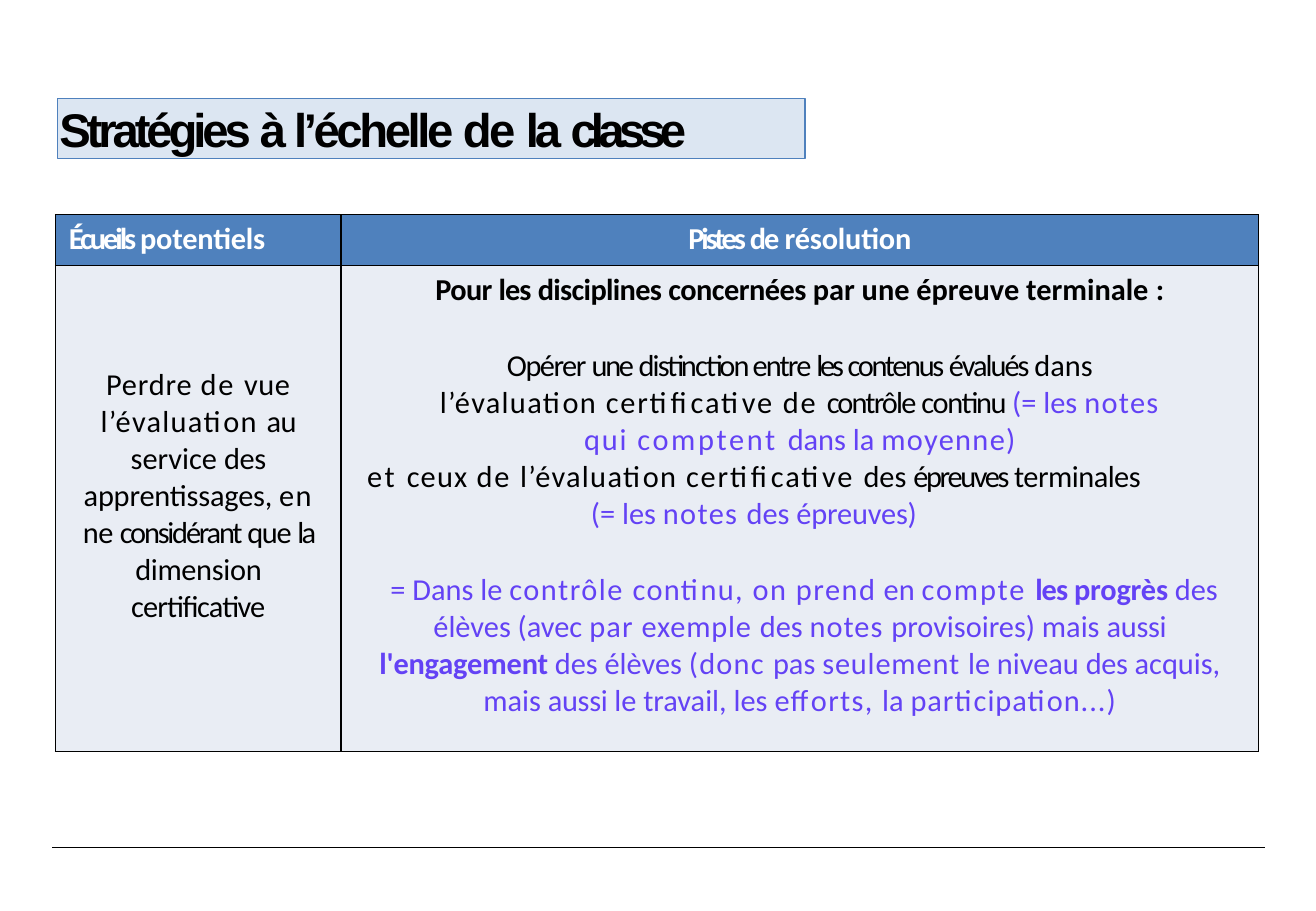
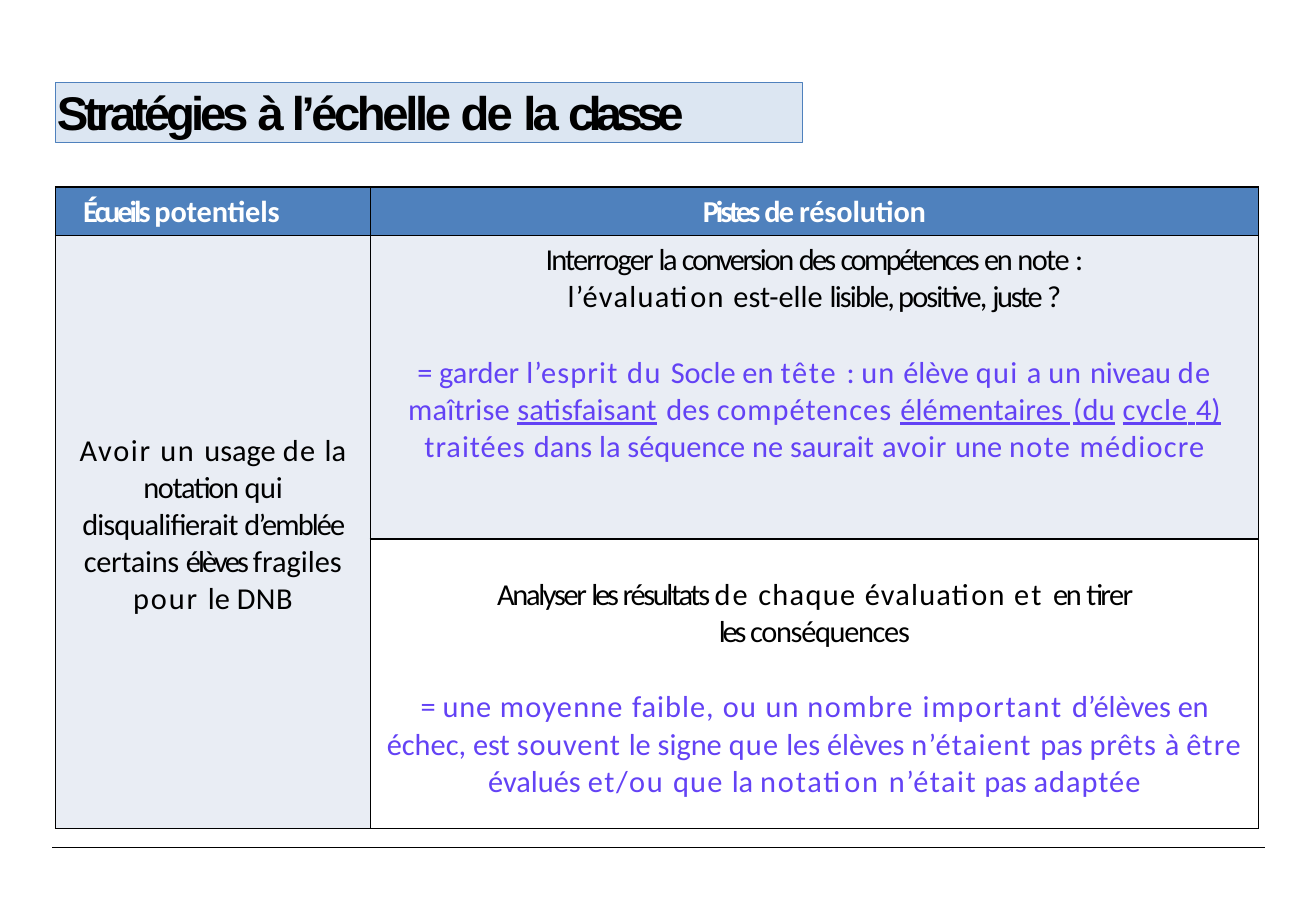
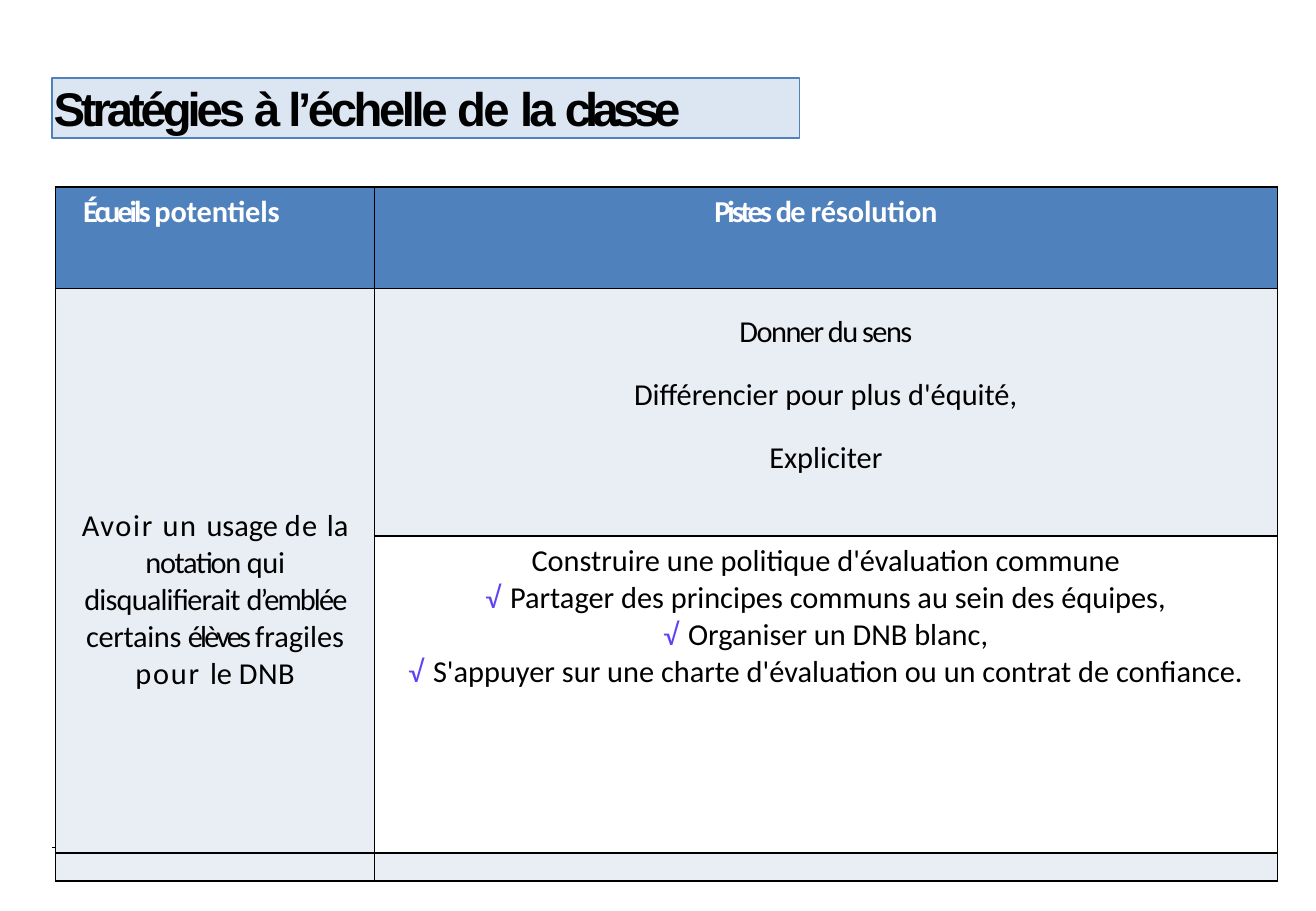
"""Build three slides on classroom strategies for assessment."""
from dataclasses import dataclass

from lxml.etree import SubElement
from pptx import Presentation
from pptx.dml.color import RGBColor as Rgb
from pptx.enum.shapes import MSO_CONNECTOR as Connector, MSO_SHAPE as Shape
from pptx.enum.text import MSO_ANCHOR as Anchor, PP_ALIGN as Align
from pptx.oxml.ns import qn
from pptx.util import Cm, Pt


@dataclass(frozen=True)
class Theme:
    black: str = "000000"
    white: str = "FFFFFF"
    accent: str = "6342F5"
    header: str = "4F81BD"
    pale: str = "E9EDF4"
    title_fill: str = "DCE6F2"
    title_font: str = "Arial"
    body_font: str = "Calibri"
    title_size: float = 28
    body_size: float = 18
    empty_size: float = 8
    rule_width: float = 0.8
    title_line: float = 0.75
    border_width: float = 1


@dataclass
class Block:
    runs: list
    before: float = 0
    left: float = 0
    right: float = 0
    indent: float = 0
    style: str = "plain"
    align: Align = Align.CENTER


@dataclass
class Cell:
    blocks: list
    top: float = 0.13
    fill: str = Theme.pale


theme = Theme()
styles = {
    "plain": {},
    "bold": {"bold": True},
    "header": {"bold": True, "color": theme.white},
    "accent": {"color": theme.accent},
    "accent bold": {"color": theme.accent, "bold": True},
    "accent underline": {"color": theme.accent, "underline": True},
    "title": {"bold": True, "size": theme.title_size, "font": theme.title_font},
}


def write(para, text, size=theme.body_size, font=theme.body_font,
          color=theme.black, bold=False, underline=False, spacing=0):
    """Add one formatted span to a paragraph."""
    span = para.add_run()
    span.text = text
    span.font.size = Pt(size)
    span.font.name = font
    span.font.bold = bold
    span.font.underline = underline
    span.font.color.rgb = Rgb.from_string(color)
    span.font._element.set("spc", str(round(spacing * 100)))


def fill_frame(frame, blocks):
    """Write blocks of spaced runs as the paragraphs of a text frame."""
    for index, block in enumerate(blocks):
        para = frame.add_paragraph() if index else frame.paragraphs[0]
        para.alignment = block.align
        if block.before:
            para.space_before = Pt(block.before)
        props = para._p.get_or_add_pPr()
        for name, length in (("marL", block.left), ("marR", block.right),
                             ("indent", block.indent)):
            props.set(name, str(Cm(length)))
        for text, spacing, *style in block.runs:
            write(para, text, spacing=spacing,
                  **styles[style[0] if style else block.style])


title = Block([
    ("Stratégies ", -2.4), ("à ", -3), ("l’échelle ", -2), ("de ", -1.6),
    ("la ", -2.3), ("classe", -3.4),
], left=0.03, style="title", align=Align.LEFT)

pitfalls_runs = [("Écueils ", -1.8), ("potentiels", -0.1)]
solutions = Cell([Block([
    ("Pistes ", -1.8), ("de ", -1.1), ("résolution", -0.1),
], style="header")], fill=theme.header)

lost_sight = Block([
    ("Perdre ", 0.5), ("de ", 1.1), ("vue ", 0.3), ("l’évaluation ", 0.8),
    ("au ", -0.3), ("service ", 0), ("des ", -0.2), ("apprentissages, ", -0.1),
    ("en ", 0.8), ("ne ", -0.3), ("considérant ", -1.3), ("que ", -0.8),
    ("la ", -1.5), ("dimension ", -0.2), ("certificative", -0.5),
], left=0.48, right=0.48)

final_exam = [
    Block([
        ("Pour ", -0.4), ("les", -0.6), (" disciplines ", -0.4),
        ("concernées ", -0.3), ("par une épreuve terminale ", 0), (":", -0.5),
    ], style="bold"),
    Block([
        ("Opérer ", -0.9), ("une ", -1.4), ("distinction entre ", -1.1),
        ("les ", -1.9), ("contenus ", -1.4), ("évalués ", -1.2), ("dans ", 0),
        ("l’évaluation ", 0.8), ("certificative de ", 1.1),
        ("contrôle ", -1.1), ("continu ", -0.8), ("(= les ", 0, "accent"),
        ("notes ", 0.8, "accent"), ("qui ", 1.1, "accent"),
        ("comptent ", 1.6, "accent"), ("dans la ", 0, "accent"),
        ("moyenne)", 0.8, "accent"),
    ], before=23, left=1.93, right=1.93),
    Block([
        ("et ", 1.5), ("ceux ", 0.7), ("de ", 1.1), ("l’évaluation ", 0.8),
        ("certificative ", 1.1), ("des ", 0), ("épreuves ", -1.4),
        ("terminales", -0.3),
    ], right=1.92),
    Block([
        ("(= les ", 0), ("notes ", 0.8), ("des ", 0), ("épreuves)", -0.1),
    ], right=1.92, style="accent"),
    Block([
        ("= Dans le ", 0), ("contrôle ", 0.9), ("continu, ", 0.8),
        ("on prend", 0.9), (" en ", 0), ("compte ", 1.1),
        ("les ", -0.6, "accent bold"), ("progrès ", -0.1, "accent bold"),
        ("des élèves (avec ", 0), ("par", 0.7), (" exemple ", 0.5),
        ("des ", 0), ("notes ", 0.6), ("provisoires) mais ", 0),
        ("aussi ", -0.2), ("l'engagement ", -0.1, "accent bold"),
        ("des élèves ", 0), ("(donc ", 0.7), ("pas ", 0),
        ("seulement ", 0.5), ("le niveau ", 0), ("des ", -0.2),
        ("acquis, mais ", 0), ("aussi ", -0.2), ("le travail, les ", 0),
        ("efforts, ", 0.8), ("la ", 0), ("participation...)", 0.6),
    ], before=22.9, left=0.36, right=0.36, indent=0.18, style="accent"),
]

grading_use = Block([
    ("Avoir un ", 1), ("usage ", 0), ("de ", 0.8), ("la ", 0),
    ("notation ", -0.8), ("qui ", -0.2), ("disqualifierait ", -0.5),
    ("d’emblée ", -1.1), ("certains ", -0.2), ("élèves ", -1.7),
    ("fragiles ", 0), ("pour ", 1.1), ("le ", 0), ("DNB", 0.3),
], left=0.33, right=0.33)

conversion = [
    Block([
        ("Interroger ", -1.1), ("la ", -1.5), ("conversion ", -1.4),
        ("des ", -1.6), ("compétences ", -1.5), ("en ", -1.4),
        ("note ", -0.9), (":", -0.5),
    ]),
    Block([
        ("l’évaluation ", 0.8), ("est-elle ", 0),
        ("lisible, positive, ", -1.1), ("juste ", -1.4), ("?", -0.5),
    ]),
    Block([
        ("= garder ", 0), ("l’esprit ", 0.7), ("du ", 1), ("Socle en ", 0),
        ("tête ", 1.1), (": ", 0), ("un ", 0.6), ("élève ", 0),
        ("qui ", 0.8), ("a ", 0), ("un ", 0.6), ("niveau ", -0.1),
        ("de ", 0.8), ("maîtrise ", 0.1),
        ("satisfaisant", 0.1, "accent underline"), (" ", 1.5),
        ("des ", 0.1), ("compétences ", 0.6),
        ("élémentaires", 0.1, "accent underline"),
        (" ", 1.7, "accent underline"), ("(du", 0.2, "accent underline"),
        (" ", 0.2), ("cycle", 0.5, "accent underline"),
        (" ", 0.7, "accent underline"), ("4)", 0, "accent underline"),
        (" ", 0.7), ("traitées ", 0.6), ("dans la séquence ne saurait", 0),
        (" avoir ", 0.5), ("une ", 0), ("note ", 0.8), ("médiocre", 0.7),
    ], before=22.9, left=0.48, right=0.48, style="accent"),
]

results = [
    Block([
        ("Analyser ", -1.4), ("les ", -1.9), ("résultats ", -1.4),
        ("de ", 1.1), ("chaque ", 0.8), ("évaluation ", 0.7), ("et ", 1.4),
        ("en ", -1.4), ("tirer ", -0.9), ("les ", -1.9),
        ("conséquences", -0.8),
    ], left=2.64, right=2.64),
    Block([
        ("= ", 0), ("une ", 0.5), ("moyenne ", 0.7), ("faible, ", 0.6),
        ("ou ", 0.8), ("un ", 0.6), ("nombre ", 0.9), ("important ", 1.1),
        ("d’élèves ", 0), ("en ", -0.2), ("échec, est ", 0),
        ("souvent ", 0.5), ("le signe ", 0), ("que", 0.7),
        (" les élèves ", 0), ("n’étaient ", 0.8), ("pas ", 0),
        ("prêts ", 0.5), ("à ", 0), ("être", 0.8), (" évalués ", 0),
        ("et/ou ", 1), ("que ", 0.7), ("la ", 0), ("notation ", 1.1),
        ("n’était", 0.9), (" pas ", 0), ("adaptée", 0.6),
    ], before=22.9, left=0.3, right=0.3, style="accent"),
]

meaning = [
    Block([("Donner du sens", -0.9)]),
    Block([("Différencier pour plus d'équité,", 0)], before=15.3),
    Block([("Expliciter", 0)], before=15.3),
]

common_policy = [Block([("Construire une politique d'évaluation commune", 0)])]
common_policy += [Block([("√ ", 0.8, "accent"), (action, 0)]) for action in (
    "Partager des principes communs au sein des équipes,",
    "Organiser un DNB blanc,",
    "S'appuyer sur une charte d'évaluation ou un contrat de confiance.",
)]

pages = [
    {
        "title_at": (1.21, 2.06), "table_top": 4.49, "header_indent": 0.28,
        "columns": (5.97, 19.18), "rows": (1.06, 10.16),
        "body": [[Cell([lost_sight], top=2.11), Cell(final_exam)]],
    },
    {
        "title_at": (1.16, 1.72), "table_top": 3.91, "header_indent": 0.58,
        "columns": (6.58, 18.57), "rows": (1.01, 6.35, 6.05),
        "body": [
            [Cell([grading_use], top=4.13), Cell(conversion)],
            [None, Cell(results, top=0.78, fill=theme.white)],
        ],
    },
    {
        "title_at": (1.09, 1.63), "table_top": 3.91, "header_indent": 0.58,
        "columns": (6.67, 18.87), "rows": (2.12, 5.18, 6.63, 0.58),
        "body": [
            [Cell([grading_use], top=4.58), Cell(meaning, top=0.53)],
            [None, Cell(common_policy, fill=theme.white)],
            [Cell([], top=0), Cell([], top=0)],
        ],
    },
]

deck = Presentation()
deck.slide_width, deck.slide_height = Cm(27.51), Cm(19.05)

for page in pages:
    slide = deck.slides.add_slide(deck.slide_layouts[6])

    rule = slide.shapes.add_connector(
        Connector.STRAIGHT, Cm(1.09), Cm(17.72), Cm(26.44), Cm(17.72))
    rule.line.color.rgb = Rgb.from_string(theme.black)
    rule.line.width = Pt(theme.rule_width)
    SubElement(rule._element.spPr, qn("a:effectLst"))

    columns, rows = page["columns"], page["rows"]
    table = slide.shapes.add_table(
        len(rows), len(columns), Cm(1.16), Cm(page["table_top"]),
        Cm(sum(columns)), Cm(sum(rows))).table
    table.first_row = table.horz_banding = False
    for column, width in zip(table.columns, columns):
        column.width = Cm(width)
    for row, height in zip(table.rows, rows):
        row.height = Cm(height)

    pitfalls = Cell([Block(pitfalls_runs, left=page["header_indent"],
                           style="header", align=Align.LEFT)], fill=theme.header)
    for row_index, row_cells in enumerate([[pitfalls, solutions], *page["body"]]):
        for column_index, content in enumerate(row_cells):
            cell = table.cell(row_index, column_index)
            for side in ("a:lnL", "a:lnR", "a:lnT", "a:lnB"):
                border = SubElement(cell._tc.get_or_add_tcPr(), qn(side),
                                    w=str(Pt(theme.border_width)))
                paint = SubElement(border, qn("a:solidFill"))
                SubElement(paint, qn("a:srgbClr"), val=theme.black)
            cell.fill.solid()
            if content is None:
                cell.fill.fore_color.rgb = Rgb.from_string(theme.pale)
                table.cell(row_index - 1, column_index).merge(cell)
                continue
            cell.fill.fore_color.rgb = Rgb.from_string(content.fill)
            cell.margin_left = cell.margin_right = cell.margin_bottom = 0
            cell.margin_top = Cm(content.top)
            cell.vertical_anchor = Anchor.TOP
            fill_frame(cell.text_frame, content.blocks)
            if not content.blocks:
                end = cell.text_frame.paragraphs[0]._p.get_or_add_endParaRPr()
                end.set("sz", str(theme.empty_size * 100))

    left, top = page["title_at"]
    box = slide.shapes.add_shape(
        Shape.RECTANGLE, Cm(left), Cm(top), Cm(15.62), Cm(1.26))
    box.shadow.inherit = False
    box.fill.solid()
    box.fill.fore_color.rgb = Rgb.from_string(theme.title_fill)
    box.line.color.rgb = Rgb.from_string(theme.header)
    box.line.width = Pt(theme.title_line)
    frame = box.text_frame
    frame.word_wrap = True
    frame.vertical_anchor = Anchor.TOP
    frame.margin_left = frame.margin_right = frame.margin_bottom = 0
    frame.margin_top = Cm(0.03)
    fill_frame(frame, [title])

deck.save("out.pptx")
